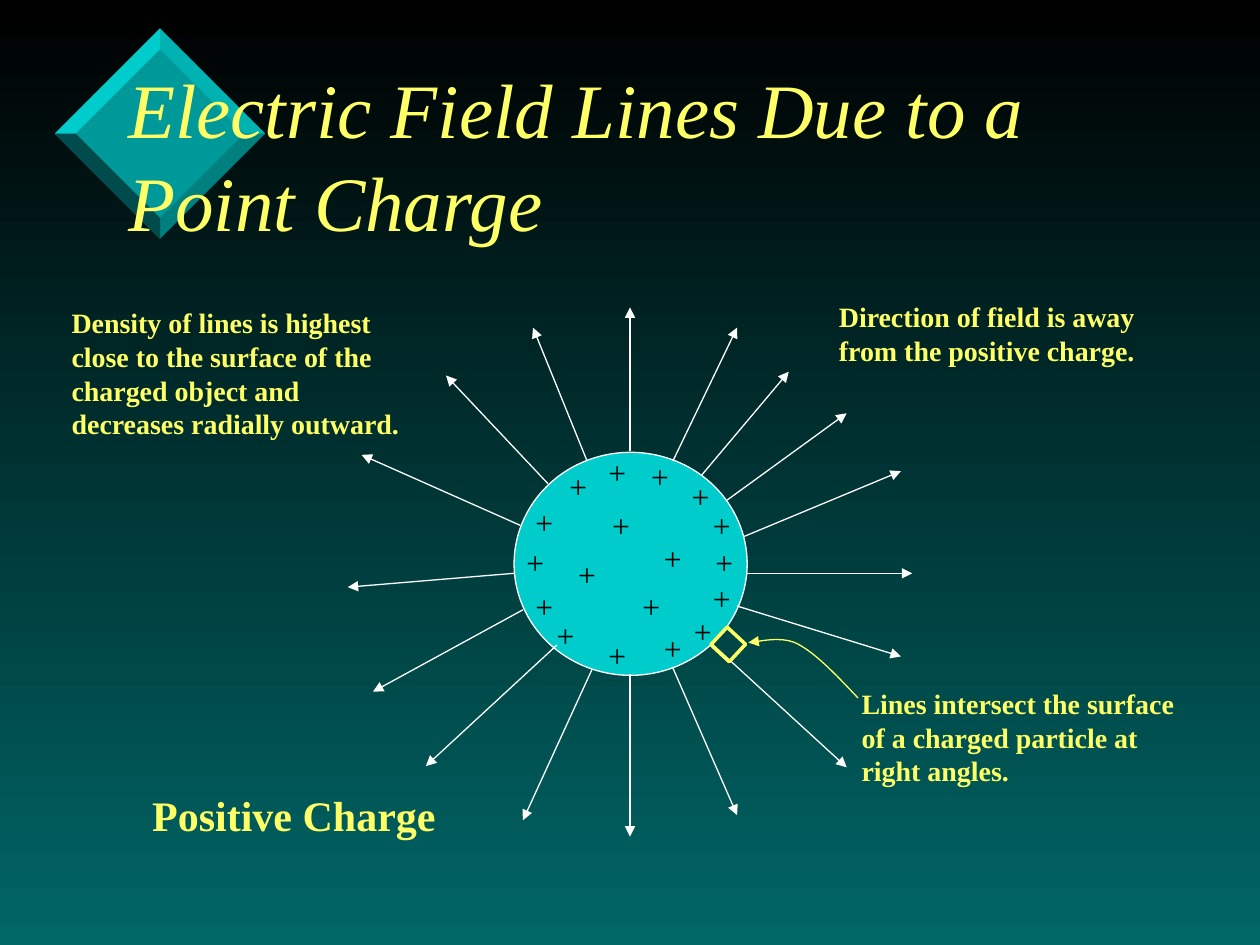
from typing import NamedTuple

from lxml import etree
from pptx import Presentation
from pptx.dml.color import RGBColor
from pptx.enum.shapes import MSO_CONNECTOR, MSO_SHAPE
from pptx.enum.text import MSO_ANCHOR, MSO_AUTO_SIZE
from pptx.oxml.ns import qn
from pptx.util import Inches, Pt

STRAIGHT = MSO_CONNECTOR.STRAIGHT
ELLIPSE = MSO_SHAPE.OVAL
RECTANGLE = MSO_SHAPE.RECTANGLE
MIDDLE = MSO_ANCHOR.MIDDLE
GROW = MSO_AUTO_SIZE.SHAPE_TO_FIT_TEXT

BLACK = RGBColor(0x00, 0x00, 0x00)
DARK_TEAL = RGBColor(0x00, 0x66, 0x66)
TEAL = RGBColor(0x00, 0x99, 0x99)
CYAN = RGBColor(0x00, 0xCC, 0xCC)
WHITE = RGBColor(0xFF, 0xFF, 0xFF)
YELLOW = RGBColor(0xFF, 0xFF, 0x66)
FONT = "Times New Roman"

SLIDE_WIDTH, SLIDE_HEIGHT = Inches(10), Inches(7.5)
COLUMNS, ROWS = 100, 75

Point = tuple[float, float]


class Label(NamedTuple):
    text: str
    left: float
    top: float
    width: float
    height: float
    size: int
    color: RGBColor = YELLOW
    bold: bool = True
    italic: bool = False
    wrap: bool = True
    grow: bool = True


class Facet(NamedTuple):
    offsets: list[Point]  # measured from the centre of the diamond
    color: RGBColor
    opacity: int = 100


class FieldLine(NamedTuple):
    start: Point
    end: Point


DIAMOND_CENTER = (12.7, 10.6)
OUTER, INNER = 8.35, 6.7
FACETS = [
    Facet([(0, -OUTER), (-OUTER, 0), (0, OUTER), (OUTER, 0)], TEAL),
    Facet([(0, -INNER), (0, -OUTER), (OUTER, 0), (INNER, 0)], CYAN, 50),
    Facet([(0, -OUTER), (0, -INNER), (-INNER, 0), (-OUTER, 0)], CYAN),
    Facet([(INNER, 0), (OUTER, 0), (0, OUTER), (0, INNER)], DARK_TEAL, 50),
    Facet([(-INNER, 0), (0, INNER), (0, OUTER), (-OUTER, 0)], BLACK, 50),
]

TITLE = Label("Electric Field Lines Due to a Point Charge", 9.2, 4.6, 85.1, 15.3, 44,
              bold=False, italic=True, grow=False)
NOTES = [
    Label("Positive Charge", 11.1, 62.2, 24.5, 5, 24, wrap=False),
    Label("Direction of field is away from the positive charge.",
          65.6, 23.3, 28.6, 6.4, 16),
    Label("Lines intersect the surface of a charged particle at right angles.",
          67.4, 54, 28.6, 9, 16),
    Label("Density of lines is highest close to the surface of the charged object "
          "and decreases radially outward.", 4.7, 23.8, 28.6, 11.7, 16),
]

PLUS_CORNERS = [
    (50.7, 35.8), (53.9, 37.4), (55.6, 39.7), (55.8, 42.6), (51.7, 42.3), (55.6, 45.5),
    (54.1, 48.1), (50, 46.1), (51.7, 49.4), (44.9, 43.6), (47.3, 50), (41.5, 46.1),
    (43.2, 48.4), (44.2, 36.6), (47.6, 39.7), (47.3, 35.5), (40.8, 42.6), (41.5, 39.4),
]

FIELD_LINES = [
    FieldLine((50, 35.8), (50, 24.4)),
    FieldLine((46.6, 36.6), (42.3, 26)),
    FieldLine((43.5, 38.4), (35.4, 29.8)),
    FieldLine((41.3, 41.7), (28.7, 36.1)),
    FieldLine((40.8, 45.5), (27.6, 46.6)),
    FieldLine((41.5, 48.4), (29.6, 54.9)),
    FieldLine((44.2, 51.2), (33.8, 60.8)),
    FieldLine((47, 53.1), (41.5, 65.1)),
    FieldLine((50, 53.5), (50, 66.4)),
    FieldLine((53.4, 53), (58.5, 64.7)),
    FieldLine((56.5, 51.1), (67.2, 60.9)),
    FieldLine((58.5, 48.1), (71.5, 52.1)),
    FieldLine((59.3, 45.5), (72.4, 45.5)),
    FieldLine((59, 42.6), (71.5, 37.4)),
    FieldLine((57.7, 39.7), (67.2, 32.8)),
    FieldLine((55.7, 37.7), (62.6, 29.5)),
    FieldLine((53.4, 36.6), (58.5, 26)),
]

POINTER_CURVES = [
    [(68.1, 55.4), (66.4, 53.6), (64.8, 51.9), (63.3, 51.1)],
    [(63.3, 51.1), (61.9, 50.4), (60, 51), (59.4, 51)],
]
CURVE_STEPS = 12


def col(count: float) -> int:
    return round(SLIDE_WIDTH * count / COLUMNS)


def row(count: float) -> int:
    return round(SLIDE_HEIGHT * count / ROWS)


def add_label(slide, label: Label) -> None:
    box = slide.shapes.add_textbox(col(label.left), row(label.top),
                                   col(label.width), row(label.height))
    frame = box.text_frame
    frame.word_wrap = label.wrap
    if label.grow:
        frame.auto_size = GROW
    else:
        frame.vertical_anchor = MIDDLE
    run = frame.paragraphs[0].add_run()
    run.text = label.text
    font = run.font
    font.name, font.size = FONT, Pt(label.size)
    font.bold, font.italic = label.bold, label.italic
    font.color.rgb = label.color


def add_outline(slide, points: list[Point], close: bool):
    (start_x, start_y), *others = [(col(x), row(y)) for x, y in points]
    builder = slide.shapes.build_freeform(start_x, start_y)
    builder.add_line_segments(others, close=close)
    shape = builder.convert_to_shape()
    shape.shadow.inherit = False
    return shape


def add_facet(slide, facet: Facet) -> None:
    center_x, center_y = DIAMOND_CENTER
    points = [(center_x + dx, center_y + dy) for dx, dy in facet.offsets]
    shape = add_outline(slide, points, close=True)
    shape.fill.solid()
    shape.fill.fore_color.rgb = facet.color
    shape.line.fill.background()
    if facet.opacity < 100:
        color = shape.fill._xPr.find(".//" + qn("a:srgbClr"))
        etree.SubElement(color, qn("a:alpha"), val=str(facet.opacity * 1000))


def style_line(shape, color: RGBColor, width: float, arrow: bool = False) -> None:
    shape.line.color.rgb = color
    shape.line.width = Pt(width)
    if arrow:
        etree.SubElement(shape.line._get_or_add_ln(), qn("a:tailEnd"), type="triangle")


def add_field_line(slide, line: FieldLine) -> None:
    (x1, y1), (x2, y2) = line
    arrow = slide.shapes.add_connector(STRAIGHT, col(x1), row(y1), col(x2), row(y2))
    style_line(arrow, WHITE, 0.75, arrow=True)
    etree.SubElement(arrow._element.spPr, qn("a:effectLst"))


def bezier_point(controls: list[Point], t: float) -> Point:
    weights = ((1 - t) ** 3, 3 * t * (1 - t) ** 2, 3 * t ** 2 * (1 - t), t ** 3)
    return (sum(w * x for w, (x, _) in zip(weights, controls)),
            sum(w * y for w, (_, y) in zip(weights, controls)))


def add_charge(slide) -> None:
    charge = slide.shapes.add_shape(ELLIPSE, col(40.8), row(35.9), col(18.5), row(17.7))
    charge.shadow.inherit = False
    charge.fill.solid()
    charge.fill.fore_color.rgb = CYAN
    style_line(charge, WHITE, 0.75)
    for left, top in PLUS_CORNERS:
        add_label(slide, Label("+", left, top, 3.4, 4, 18, BLACK, bold=False, wrap=False))


def add_right_angle_mark(slide) -> None:
    mark = slide.shapes.add_shape(RECTANGLE, col(56.8), row(50.2), col(2), row(1.9))
    mark.rotation = 42.9
    mark.shadow.inherit = False
    mark.fill.background()
    style_line(mark, YELLOW, 2)
    points = [POINTER_CURVES[0][0]]
    points += [bezier_point(curve, step / CURVE_STEPS)
               for curve in POINTER_CURVES for step in range(1, CURVE_STEPS + 1)]
    pointer = add_outline(slide, points, close=False)
    pointer.fill.background()
    style_line(pointer, YELLOW, 0.75, arrow=True)


def main() -> None:
    deck = Presentation()
    deck.slide_width, deck.slide_height = SLIDE_WIDTH, SLIDE_HEIGHT
    slide = deck.slides.add_slide(deck.slide_layouts[6])
    backdrop = slide.background.fill
    backdrop.gradient()
    backdrop.gradient_angle = 270
    for stop, color in zip(backdrop.gradient_stops, (BLACK, DARK_TEAL)):
        stop.color.rgb = color
    for facet in FACETS:
        add_facet(slide, facet)
    add_label(slide, TITLE)
    add_charge(slide)
    for line in FIELD_LINES:
        add_field_line(slide, line)
    for note in NOTES:
        add_label(slide, note)
    add_right_angle_mark(slide)
    deck.save("out.pptx")


if __name__ == "__main__":
    main()
